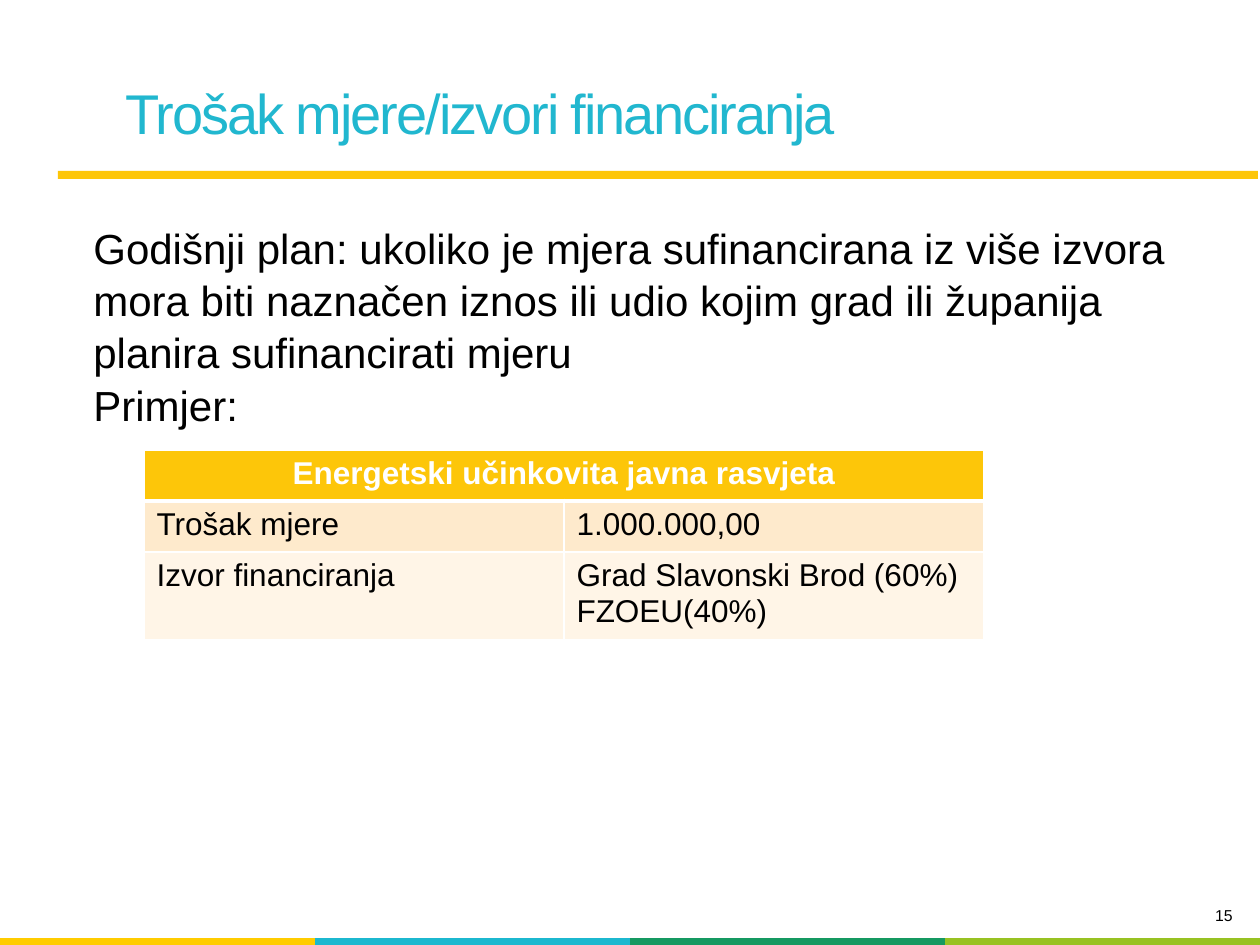
from dataclasses import dataclass

import pptx
import pptx.dml.color
import pptx.enum.text
import pptx.oxml.ns
import pptx.util
from lxml import etree

EMU_PER_PX = 914400 / 126
ALIGN = pptx.enum.text.PP_ALIGN
WHITE = "FFFFFF"
BLACK = "000000"
CYAN = "21B7CF"
GOLD = "FDC609"


@dataclass(frozen=True)
class Box:
    left: int
    top: int
    width: int
    height: int


@dataclass(frozen=True)
class TextStyle:
    size: int
    color: str = BLACK
    bold: bool = False
    align: ALIGN = ALIGN.LEFT
    line_spacing: float = 1.0


@dataclass(frozen=True)
class TableRow:
    height: int
    texts: tuple[str, ...]
    fills: tuple[str, ...]
    style: TextStyle
    bottom_border: int


def px(value: int) -> pptx.util.Emu:
    return pptx.util.Emu(round(value * EMU_PER_PX))


def frame(box: Box) -> tuple:
    return px(box.left), px(box.top), px(box.width), px(box.height)


def rgb(value: str) -> pptx.dml.color.RGBColor:
    return pptx.dml.color.RGBColor.from_string(value)


def write(text_frame, text: str, style: TextStyle) -> None:
    text_frame.text = text
    for para in text_frame.paragraphs:
        para.alignment = style.align
        para.line_spacing = style.line_spacing
        for span in para.runs:
            span.font.name = "Arial"
            span.font.size = pptx.util.Pt(style.size)
            span.font.bold = style.bold
            span.font.color.rgb = rgb(style.color)


def add_text(page, box: Box, text: str, style: TextStyle) -> None:
    text_box = page.shapes.add_textbox(*frame(box))
    text_box.text_frame.word_wrap = True
    write(text_box.text_frame, text, style)


def set_border(cell, side: str, points: int) -> None:
    properties = cell._tc.get_or_add_tcPr()
    name = pptx.oxml.ns.qn
    line = etree.SubElement(properties, name(f"a:ln{side}"), w=str(pptx.util.Pt(points)))
    if points:
        fill = etree.SubElement(line, name("a:solidFill"))
        etree.SubElement(fill, name("a:srgbClr"), val=WHITE)
    else:
        etree.SubElement(line, name("a:noFill"))


def add_table(page, box: Box, rows: list[TableRow], border: int):
    columns = len(rows[0].fills)
    table = page.shapes.add_table(len(rows), columns, *frame(box)).table
    table.horz_banding = False
    for column in table.columns:
        column.width = px(box.width // columns)
    top_border = border
    for row_index, row in enumerate(rows):
        table.rows[row_index].height = px(row.height)
        for column_index, fill in enumerate(row.fills):
            cell = table.cell(row_index, column_index)
            for side, points in zip("LRTB", (border, border, top_border, row.bottom_border)):
                set_border(cell, side, points)
            cell.fill.solid()
            cell.fill.fore_color.rgb = rgb(fill)
            if column_index < len(row.texts):
                write(cell.text_frame, row.texts[column_index], row.style)
        top_border = row.bottom_border
    return table


def main() -> None:
    deck = pptx.Presentation()
    deck.slide_width, deck.slide_height = px(1260), px(945)
    page = deck.slides.add_slide(deck.slide_layouts[5])

    strip_colors = ("FFCC00", "1CB8CF", "159961", "98C222")
    strip = TableRow(21, (), strip_colors, TextStyle(9), 0)
    add_table(page, Box(0, 938, 1260, 21), [strip], 0)
    add_text(page, Box(997, 900, 248, 39), "15", TextStyle(9, align=ALIGN.RIGHT))

    title = page.shapes.title
    title.left, title.top, title.width, title.height = frame(Box(113, 72, 1113, 81))
    write(title.text_frame, "Trošak mjere/izvori financiranja", TextStyle(32, CYAN))
    for span in title.text_frame.paragraphs[0].runs:
        span._r.get_or_add_rPr().set("spc", "-120")

    rule = page.shapes.add_shape(
        pptx.enum.shapes.MSO_SHAPE.RECTANGLE, *frame(Box(58, 171, 1200, 8))
    )
    rule.shadow.inherit = False
    rule.fill.solid()
    rule.fill.fore_color.rgb = rgb(GOLD)
    rule.line.fill.background()

    add_text(
        page,
        Box(81, 214, 1124, 267),
        "Godišnji plan: ukoliko je mjera sufinancirana iz više izvora mora biti naznačen "
        "iznos ili udio kojim grad ili županija planira sufinancirati mjeru\nPrimjer:",
        TextStyle(24, line_spacing=1.04),
    )

    header_style = TextStyle(18, WHITE, True, ALIGN.CENTER)
    body_style = TextStyle(18)
    cost_rows = [
        TableRow(51, ("Energetski učinkovita javna rasvjeta",), (GOLD,) * 2, header_style, 3),
        TableRow(51, ("Trošak mjere", "1.000.000,00"), ("FEEACC",) * 2, body_style, 1),
        TableRow(
            88,
            ("Izvor financiranja", "Grad Slavonski Brod (60%)\nFZOEU(40%)"),
            ("FFF5E7",) * 2,
            body_style,
            1,
        ),
    ]
    cost_table = add_table(page, Box(144, 450, 840, 190), cost_rows, 1)
    cost_table.cell(0, 0).merge(cost_table.cell(0, 1))

    deck.save("out.pptx")


if __name__ == "__main__":
    import pptx.enum.shapes

    main()
